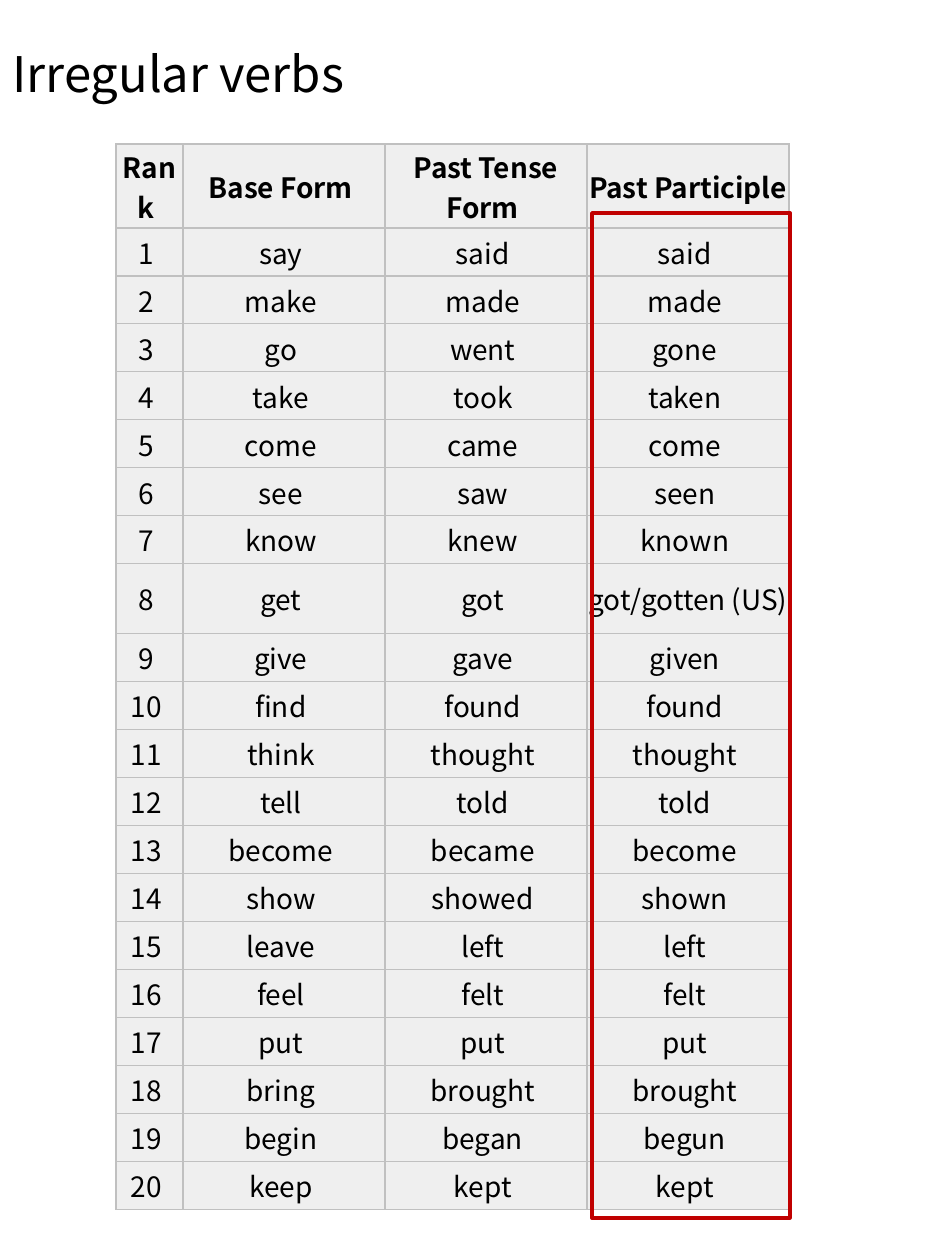
from lxml import etree
from pptx import Presentation
from pptx.dml.color import RGBColor
from pptx.enum.shapes import MSO_SHAPE
from pptx.enum.text import MSO_ANCHOR, PP_ALIGN
from pptx.oxml.ns import qn
from pptx.util import Pt

RECT = MSO_SHAPE.RECTANGLE
MIDDLE = MSO_ANCHOR.MIDDLE
CENTER = PP_ALIGN.CENTER

# Content
TITLE = "Irregular verbs"
HEADERS = ("Rank", "Base Form", "Past Tense Form", "Past Participle")
VERBS = [
    ("say", "said", "said"),
    ("make", "made", "made"),
    ("go", "went", "gone"),
    ("take", "took", "taken"),
    ("come", "came", "come"),
    ("see", "saw", "seen"),
    ("know", "knew", "known"),
    ("get", "got", "got/gotten (US)"),
    ("give", "gave", "given"),
    ("find", "found", "found"),
    ("think", "thought", "thought"),
    ("tell", "told", "told"),
    ("become", "became", "become"),
    ("show", "showed", "shown"),
    ("leave", "left", "left"),
    ("feel", "felt", "felt"),
    ("put", "put", "put"),
    ("bring", "brought", "brought"),
    ("begin", "began", "begun"),
    ("keep", "kept", "kept"),
]

# Style and layout, in px
FONT = "Noto Sans CJK KR"
COLORS = {"text": "000000", "cell": "EFEFEF", "border": "C0C0C0", "frame": "C00000"}
SLIDE = (945, 1260)
TITLE_BOX = (0, -26, 850, 197)
TABLE_LEFT, TABLE_TOP = 116, 144
COL_WIDTHS = (67, 202, 202, 202)
ROW_HEIGHT = 48
TALL_ROWS = {0: 84, 8: 70}
CELL_INSET = 1
FRAME_BOX = (592, 213, 198, 1005)
BORDER_PT = 0.75


def px(n):
    return round(n * 914400 / 126)


def color(name):
    return RGBColor.from_string(COLORS[name])


def set_font(p, size, bold=False):
    p.font.name = FONT
    p.font.size = Pt(size)
    p.font.bold = bold
    p.font.color.rgb = color("text")


def add_borders(cell):
    tcPr = cell._tc.get_or_add_tcPr()
    for side in ("lnL", "lnR", "lnT", "lnB"):
        ln = etree.SubElement(tcPr, qn("a:" + side), w=str(Pt(BORDER_PT)))
        fill = etree.SubElement(ln, qn("a:solidFill"))
        etree.SubElement(fill, qn("a:srgbClr"), val=COLORS["border"])


def fill_cell(cell, text, bold):
    add_borders(cell)
    cell.fill.solid()
    cell.fill.fore_color.rgb = color("cell")
    cell.vertical_anchor = MIDDLE
    cell.margin_left = cell.margin_right = px(CELL_INSET)
    cell.margin_top = cell.margin_bottom = px(CELL_INSET)
    p = cell.text_frame.paragraphs[0]
    p.text = text + " "  # the trailing space sets the centring
    p.alignment = CENTER
    set_font(p, 16, bold)


prs = Presentation()
prs.slide_width, prs.slide_height = map(px, SLIDE)
s = prs.slides.add_slide(prs.slide_layouts[6])

# Title
tf = s.shapes.add_textbox(*map(px, TITLE_BOX)).text_frame
tf.word_wrap = True
tf.vertical_anchor = MIDDLE
tf.paragraphs[0].text = TITLE
set_font(tf.paragraphs[0], 28)

# Verb table
rows = [HEADERS] + [(str(rank), *forms) for rank, forms in enumerate(VERBS, 1)]
heights = [TALL_ROWS.get(i, ROW_HEIGHT) for i in range(len(rows))]
table = s.shapes.add_table(
    len(rows), len(HEADERS), px(TABLE_LEFT), px(TABLE_TOP),
    px(sum(COL_WIDTHS)), px(sum(heights))).table
table.horz_banding = False
for col, width in zip(table.columns, COL_WIDTHS):
    col.width = px(width)
for i, (row, height) in enumerate(zip(rows, heights)):
    table.rows[i].height = px(height)
    for j, text in enumerate(row):
        fill_cell(table.cell(i, j), text, bold=i == 0)

# Frame around the past participles
frame = s.shapes.add_shape(RECT, *map(px, FRAME_BOX))
frame.shadow.inherit = False
frame.fill.background()
frame.line.color.rgb = color("frame")
frame.line.width = Pt(2)

prs.save("out.pptx")
